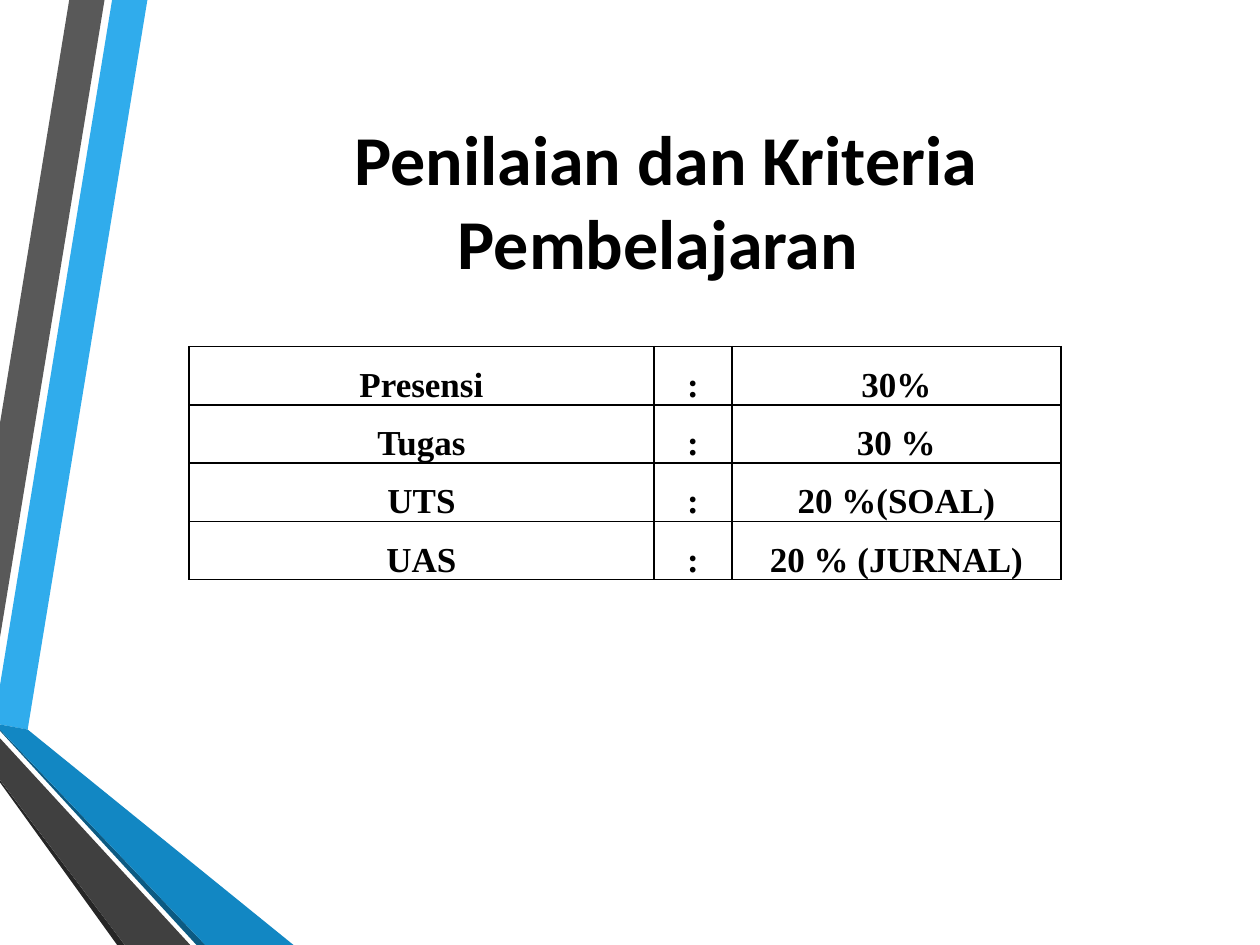
from dataclasses import dataclass

import pptx
import pptx.dml.color
import pptx.enum.text
import pptx.oxml
import pptx.oxml.ns
import pptx.util

Inches = pptx.util.Inches
Pt = pptx.util.Pt
CENTER = pptx.enum.text.PP_ALIGN.CENTER
MIDDLE = pptx.enum.text.MSO_ANCHOR.MIDDLE

COLORS = {
    "sky": "30ACEC",
    "grey": "595959",
    "charcoal": "262626",
    "navy": "0C5A82",
    "blue": "1287C3",
    "graphite": "404040",
    "black": "000000",
}


@dataclass
class Ribbon:
    color: str
    points: list[tuple[float, float]]


RIBBONS = [
    Ribbon("sky", [(0, 5.44), (0, 5.75), (0.22, 5.79), (1.17, 0), (0.89, 0)]),
    Ribbon("grey", [(0.83, 0), (0.55, 0), (0, 3.36), (0, 5.06)]),
    Ribbon("charcoal", [(0, 6.19), (0, 6.21), (0.93, 7.5), (0.99, 7.5)]),
    Ribbon("navy", [(0, 5.79), (0, 5.8), (1.56, 7.5), (1.63, 7.5)]),
    Ribbon("blue", [(0, 5.79), (1.63, 7.5), (2.33, 7.5), (0.22, 5.79), (0, 5.75)]),
    Ribbon("graphite", [(0, 6.19), (0.99, 7.5), (1.51, 7.5), (0, 5.86)]),
]

COLUMN_WIDTHS = [3.69, 0.62, 2.61]
ROW_HEIGHT = 0.43
CRITERIA = [
    ("Presensi", "30%"),
    ("Tugas", "30 %"),
    ("UTS", "20 %(SOAL)"),
    ("UAS", "20 % (JURNAL)"),
]


def rgb(name: str) -> pptx.dml.color.RGBColor:
    return pptx.dml.color.RGBColor.from_string(COLORS[name])


def style_paragraph(para, font_name: str, size: float) -> None:
    para.alignment = CENTER
    para.font.name = font_name
    para.font.size = Pt(size)
    para.font.bold = True
    para.font.color.rgb = rgb("black")


def draw_ribbon(page, ribbon: Ribbon) -> None:
    points = [(Inches(x), Inches(y)) for x, y in ribbon.points]
    builder = page.shapes.build_freeform(*points[0])
    builder.add_line_segments(points[1:], close=True)
    shape = builder.convert_to_shape()
    shape.shadow.inherit = False
    shape.fill.solid()
    shape.fill.fore_color.rgb = rgb(ribbon.color)
    shape.line.fill.background()


def add_borders(cell) -> None:
    properties = cell._tc.get_or_add_tcPr()
    for side in "LRTB":
        properties.append(pptx.oxml.parse_xml(
            f'<a:ln{side} {pptx.oxml.ns.nsdecls("a")} w="{Pt(1)}"><a:solidFill>'
            f'<a:srgbClr val="{COLORS["black"]}"/></a:solidFill></a:ln{side}>'
        ))


def fill_cell(cell, text: str) -> None:
    cell.text = text
    cell.vertical_anchor = MIDDLE
    cell.margin_left = cell.margin_right = Inches(0.07)
    cell.margin_top = cell.margin_bottom = 0
    para = cell.text_frame.paragraphs[0]
    style_paragraph(para, "Times New Roman", 20)
    para.line_spacing = 1.5
    add_borders(cell)
    cell.fill.background()


def draw_criteria(page) -> None:
    table = page.shapes.add_table(
        len(CRITERIA), len(COLUMN_WIDTHS), Inches(1.5), Inches(2.75),
        Inches(sum(COLUMN_WIDTHS)), Inches(ROW_HEIGHT * len(CRITERIA)),
    ).table
    table.first_row = table.horz_banding = False
    for column, width in zip(table.columns, COLUMN_WIDTHS):
        column.width = Inches(width)
    for row, (label, weight) in zip(table.rows, CRITERIA):
        row.height = Inches(ROW_HEIGHT)
        for cell, text in zip(row.cells, (label, ":", weight)):
            fill_cell(cell, text)


def draw_title(page) -> None:
    title = page.shapes.title
    title.left, title.top = Inches(1.07), Inches(0.5)
    title.width, title.height = Inches(8.43), Inches(2.17)
    title.text_frame.text = "Penilaian dan Kriteria Pembelajaran "
    title.text_frame.word_wrap = True
    title.text_frame.vertical_anchor = MIDDLE
    style_paragraph(title.text_frame.paragraphs[0], "Calibri", 40)


def main() -> None:
    deck = pptx.Presentation()
    deck.slide_width, deck.slide_height = Inches(10), Inches(7.5)
    page = deck.slides.add_slide(deck.slide_layouts.get_by_name("Title Only"))

    # Folded ribbons along the left edge
    for ribbon in RIBBONS:
        draw_ribbon(page, ribbon)

    # Title and grading table
    draw_title(page)
    draw_criteria(page)
    deck.save("out.pptx")


if __name__ == "__main__":
    main()
